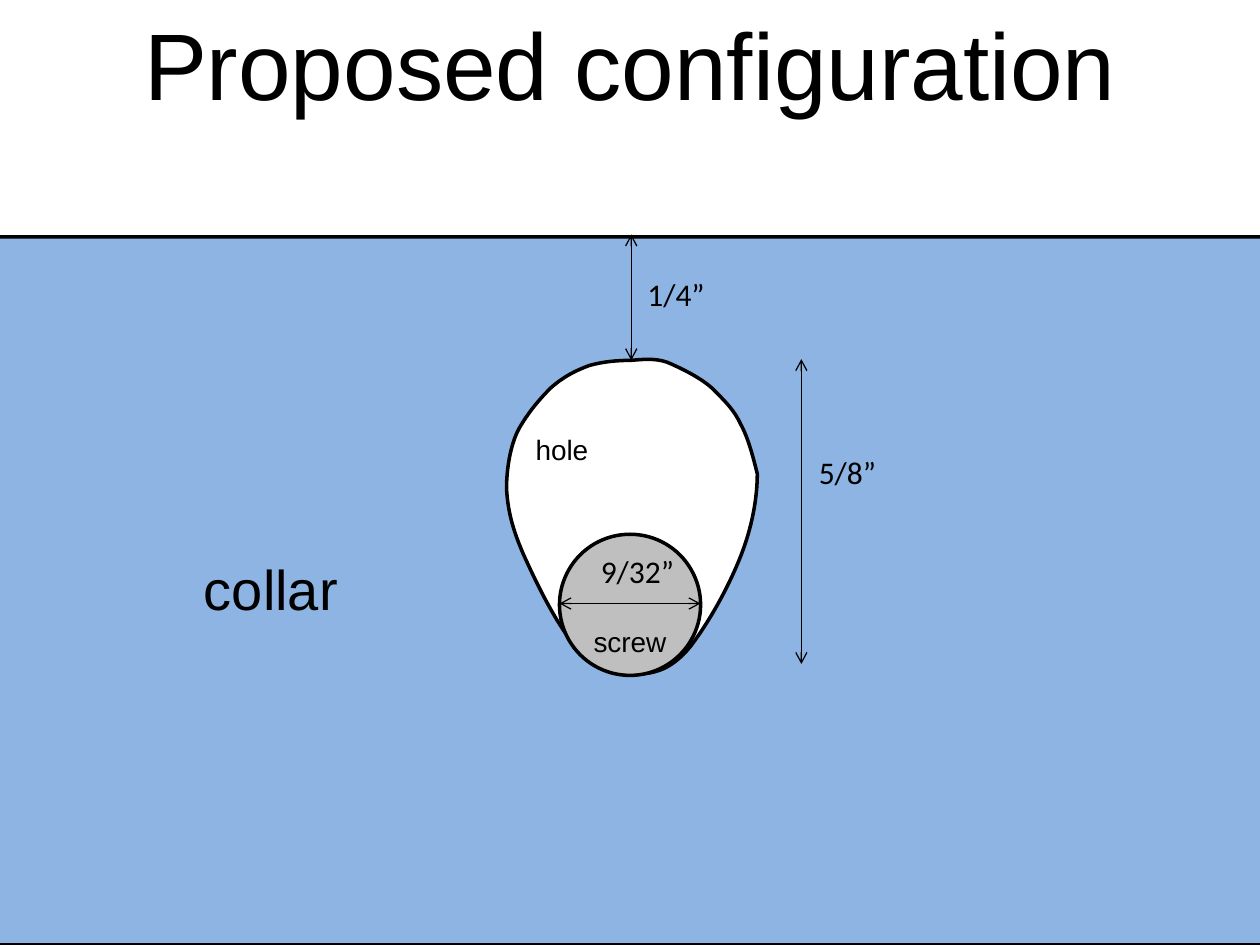
"""Build the slide showing the proposed collar, hole and screw."""
from lxml.etree import SubElement
from pptx import Presentation
from pptx.dml.color import RGBColor
from pptx.enum.shapes import MSO_CONNECTOR, MSO_SHAPE
from pptx.enum.text import MSO_ANCHOR, PP_ALIGN
from pptx.oxml.ns import qn
from pptx.util import Inches, Pt


def tint(code):
    return RGBColor.from_string(code)


def write(frame, text, face, size, form):
    for key, value in form.items():
        setattr(frame, key, value)
    para = frame.paragraphs[0]
    run = para.add_run()
    run.text = text
    for key, value in {"name": face, "size": Pt(size)}.items():
        setattr(run.font, key, value)
    run.font.color.rgb = tint("000000")
    return para


deck = Presentation()
deck.slide_width, deck.slide_height = Inches(10), Inches(7.5)
slide = deck.slides.add_slide(deck.slide_layouts[6])
shapes = slide.shapes

collar = shapes.add_shape(
    MSO_SHAPE.ROUNDED_RECTANGLE,
    Inches(-0.24), Inches(1.88), Inches(10.56), Inches(5.62))
collar.adjustments[0] = 0.02

curves = [
    [(4.06, 4.18), (4.03, 4.04), (4.02, 3.88)],
    [(4.02, 3.72), (4.05, 3.53), (4.12, 3.4)],
    [(4.19, 3.28), (4.27, 3.18), (4.37, 3.08)],
    [(4.47, 2.99), (4.57, 2.94), (4.68, 2.9)],
    [(4.79, 2.87), (4.9, 2.86), (5.01, 2.86)],
    [(5.12, 2.85), (5.23, 2.84), (5.33, 2.89)],
    [(5.44, 2.94), (5.6, 3.02), (5.68, 3.11)],
    [(5.76, 3.19), (5.83, 3.26), (5.88, 3.37)],
    [(5.94, 3.48), (5.98, 3.64), (6.01, 3.76)],
    [(6.01, 3.95), (5.97, 4.18), (5.88, 4.41)],
    [(5.79, 4.64), (5.64, 4.92), (5.48, 5.13)],
    [(5.31, 5.34), (5.16, 5.35), (5.01, 5.35)],
    [(4.86, 5.34), (4.72, 5.31), (4.56, 5.12)],
    [(4.4, 4.93), (4.24, 4.59), (4.15, 4.39)]]
knots = [[Inches(v) for v in curve[-1]] for curve in curves]
outline = shapes.build_freeform(*knots[-1], scale=1.0)
outline.add_line_segments(knots, close=True)
hole = outline.convert_to_shape()
sides = list(hole.element.iter(qn("a:lnTo")))
for side, curve in zip(sides, curves):
    bend = side.makeelement(qn("a:cubicBezTo"))
    for x, y in curve:
        point = SubElement(bend, qn("a:pt"))
        point.set("x", str(Inches(x) - hole.left))
        point.set("y", str(Inches(y) - hole.top))
    side.getparent().replace(side, bend)

screw = shapes.add_shape(
    MSO_SHAPE.OVAL, Inches(4.44), Inches(4.24), Inches(1.12), Inches(1.12))

for shape, fill in ((collar, "8EB4E3"), (hole, "FFFFFF"), (screw, "BFBFBF")):
    shape.shadow.inherit = False
    shape.fill.solid()
    shape.fill.fore_color.rgb = tint(fill)
    shape.line.color.rgb = tint("000000")
    shape.line.width = Pt(2)

para = write(hole.text_frame, "hole", "Arial", 16, {
    "vertical_anchor": MSO_ANCHOR.TOP, "word_wrap": True,
    "margin_left": Inches(0.23), "margin_top": Inches(0.57)})
para.alignment = PP_ALIGN.LEFT
para = write(screw.text_frame, "screw", "Arial", 16, {
    "vertical_anchor": MSO_ANCHOR.BOTTOM, "word_wrap": True,
    "margin_left": 0, "margin_right": 0, "margin_bottom": Inches(-0.03)})
para.alignment = PP_ALIGN.CENTER

for ends in (
        (5.01, 1.86, 5.01, 2.86),
        (6.36, 2.85, 6.36, 5.27),
        (4.44, 4.79, 5.56, 4.79)):
    arrow = shapes.add_connector(
        MSO_CONNECTOR.STRAIGHT, *[Inches(v) for v in ends])
    arrow.line.color.rgb = tint("000000")
    arrow.line.width = Pt(0.75)
    props = arrow.line._get_or_add_ln()
    for tag in ("a:headEnd", "a:tailEnd"):
        SubElement(props, qn(tag)).set("type", "arrow")
    SubElement(props.getparent(), qn("a:effectLst"))

for text, face, size, wrap, align, box in (
        ("Proposed configuration", "Arial", 54, True, PP_ALIGN.CENTER,
         (0, 0, 10, 1.01)),
        ("1/4”", "Calibri", 18, True, PP_ALIGN.LEFT, (5.04, 2.13, 1.15, 0.4)),
        ("5/8”", "Calibri", 18, True, PP_ALIGN.LEFT, (6.4, 3.55, 1.15, 0.4)),
        ("9/32”", "Calibri", 18, True, PP_ALIGN.LEFT, (4.67, 4.33, 1.24, 0.4)),
        ("collar", "Arial", 32, False, PP_ALIGN.LEFT,
         (1.52, 4.35, 1.27, 0.64))):
    label = shapes.add_textbox(*[Inches(v) for v in box])
    para = write(label.text_frame, text, face, size, {"word_wrap": wrap})
    para.alignment = align

deck.save("out.pptx")
